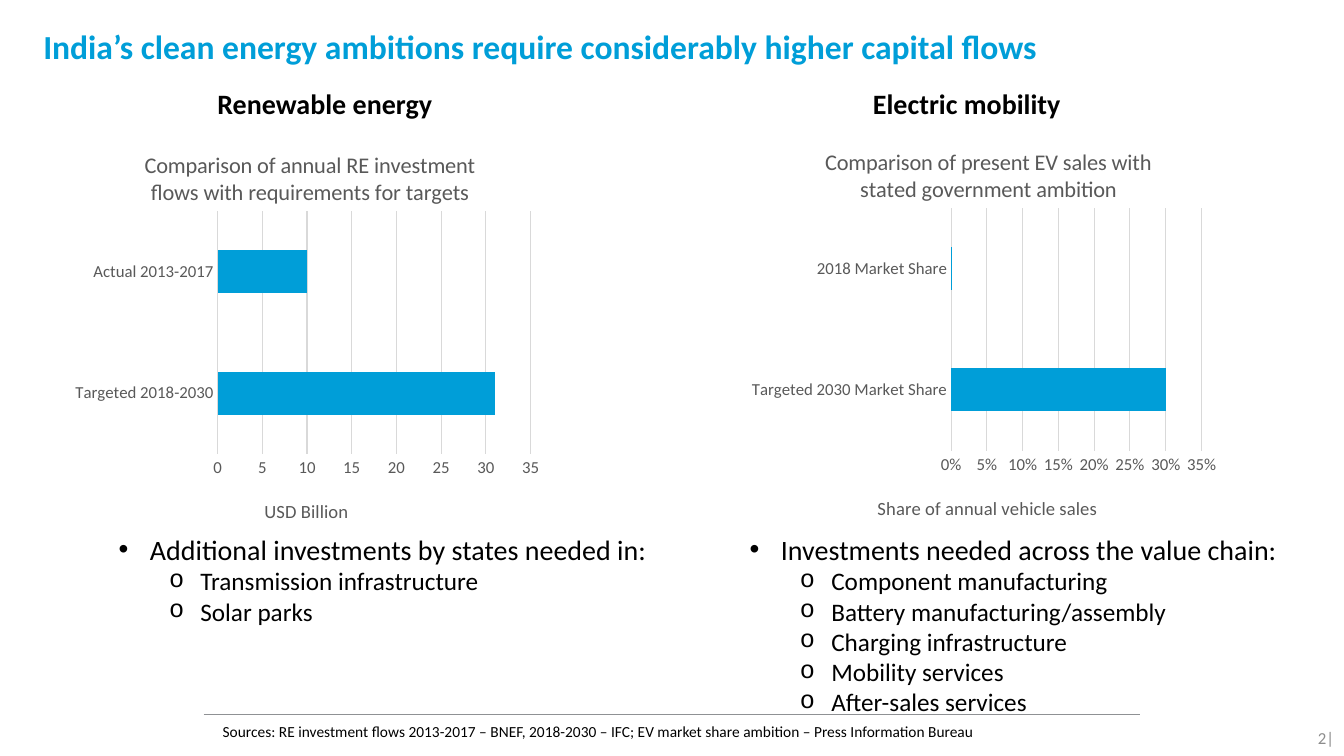
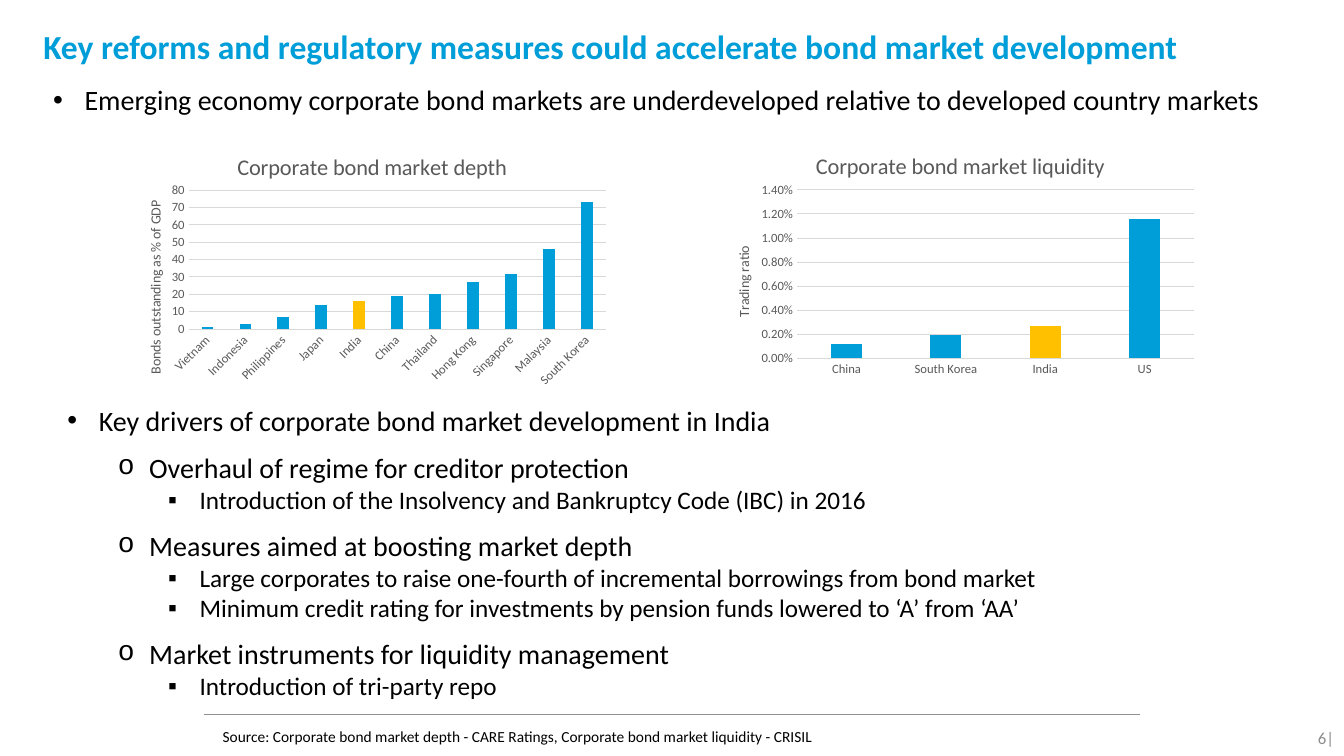
from lxml.etree import SubElement
from pptx import Presentation
from pptx.chart.data import CategoryChartData
from pptx.dml.color import RGBColor
from pptx.enum.chart import XL_CHART_TYPE as ChartType, XL_TICK_MARK as TickMark
from pptx.enum.shapes import MSO_CONNECTOR
from pptx.enum.text import MSO_ANCHOR as Anchor, MSO_AUTO_SIZE as AutoSize, PP_ALIGN as Align
from pptx.oxml.ns import qn
from pptx.util import Cm, Pt

FONT = "Calibri"
BLUE = RGBColor(0x00, 0x9E, 0xD8)
AMBER = RGBColor(0xFF, 0xC0, 0x00)
BLACK = RGBColor(0x00, 0x00, 0x00)
TEXT_GREY = RGBColor(0x59, 0x59, 0x59)
GRID_GREY = RGBColor(0xD9, 0xD9, 0xD9)
RULE_GREY = RGBColor(0x8F, 0x91, 0x94)
NUMBER_GREY = RGBColor(0x8C, 0x8C, 0x8C)

TWO_CONTENT = 3
BULLETS = [("•", "Arial"), ("o", "Courier New"), ("▪", "Arial")]
HANGING, LEVEL_STEP = 0.79, 1.27
TITLE_BOX = (1.09, 0.53, 31.34, 2.21)
NUMBER_BOX = (31.72, 18.08, 2.15, 1.02)

# Style shared by each pair of charts
BARS = dict(kind=ChartType.BAR_CLUSTERED, gap=182, overlap=0, label_size=12, axis_size=13.3)
COLUMNS = dict(kind=ChartType.COLUMN_CLUSTERED, gap=219, overlap=-27, label_size=9, axis_size=10)

# List items are (level, text, size, space before); plot is x, y, width, height in
# fractions of the chart, title_at and axis_at are x, y.
SLIDES = [
    dict(
        title="India’s clean energy ambitions require considerably higher capital flows",
        number="2|",
        source="Sources: RE investment flows 2013-2017 – BNEF, 2018-2030 – IFC; "
               "EV market share ambition – Press Information Bureau",
        source_top=18.08,
        headings=[("Renewable energy", (3.89, 2.06, 8.59, 1.12)),
                  ("Electric mobility", (20.07, 2.06, 8.59, 1.12))],
        lists=[
            ((2.74, 13.28, 14.17, 2.64), [
                (0, "Additional investments by states needed in:", 20, 0),
                (1, "Transmission infrastructure", 18, 0),
                (1, "Solar parks", 18, 0)]),
            ((18.64, 13.28, 14.9, 4.95), [
                (0, "Investments needed across the value chain:", 20, 0),
                (1, "Component manufacturing", 18, 0),
                (1, "Battery manufacturing/assembly", 18, 0),
                (1, "Charging infrastructure", 18, 0),
                (1, "Mobility services", 18, 0),
                (1, "After-sales services", 18, 0)]),
        ],
        charts=[
            dict(BARS, box=(1.6, 3.15, 12.14, 10.36),
                 title="Comparison of annual RE investment flows with requirements for targets",
                 axis="USD Billion", number_format="0", top=35, unit=5,
                 data={"Targeted 2018-2030": 31, "Actual 2013-2017": 10},
                 plot=(0.32, 0.21, 0.65, 0.59), title_at=(0.16, 0.05), axis_at=(0.41, 0.9)),
            dict(BARS, box=(18.75, 3.07, 12.14, 10.36),
                 title="Comparison of present EV sales with stated government ambition",
                 axis="Share of annual vehicle sales", number_format="0%", top=0.35, unit=0.05,
                 data={"Targeted 2030 Market Share": 0.3, "2018 Market Share": 0.001},
                 plot=(0.43, 0.21, 0.52, 0.59), title_at=(0.16, 0.05), axis_at=(0.27, 0.9)),
        ],
    ),
    dict(
        title="Key reforms and regulatory measures could accelerate bond market development",
        number="6|",
        source="Source: Corporate bond market depth - CARE Ratings, "
               "Corporate bond market liquidity - CRISIL",
        source_top=18.21,
        headings=[],
        lists=[
            ((1.09, 1.96, 30.99, 1.12), [
                (0, "Emerging economy corporate bond markets are underdeveloped "
                    "relative to developed country markets", 20, 0)]),
            ((1.45, 10.03, 31.34, 8.0), [
                (0, "Key drivers of corporate bond market development in India", 20, 0),
                (1, "Overhaul of regime for creditor protection", 20, 10),
                (2, "Introduction of the Insolvency and Bankruptcy Code (IBC) in 2016", 18, 0),
                (1, "Measures aimed at boosting market depth", 20, 10),
                (2, "Large corporates to raise one-fourth of incremental borrowings "
                    "from bond market", 18, 0),
                (2, "Minimum credit rating for investments by pension funds lowered "
                    "to ‘A’ from ‘AA’", 18, 0),
                (1, "Market instruments for liquidity management", 20, 10),
                (2, "Introduction of tri-party repo", 18, 0)]),
        ],
        charts=[
            dict(COLUMNS, box=(3, 3.18, 12.52, 6.73), title="Corporate bond market depth",
                 axis="Bonds outstanding as % of GDP", number_format="0", top=80, unit=10,
                 data={"Vietnam": 1, "Indonesia": 3, "Philippines": 7, "Japan": 14, "India": 16,
                       "China": 19, "Thailand": 20, "Hong Kong": 27, "Singapore": 32,
                       "Malaysia": 46, "South Korea": 73},
                 highlight="India", slanted=True,
                 plot=(0.14, 0.24, 0.84, 0.52), title_at=(0.23, 0.08), axis_at=(0.05, 0.27)),
            dict(COLUMNS, box=(17.83, 3.18, 12.52, 6.43), title="Corporate bond market liquidity",
                 axis="Trading ratio", number_format="0.00%", top=0.014, unit=0.002,
                 data={"China": 0.0012, "South Korea": 0.0019, "India": 0.0027, "US": 0.0116},
                 highlight="India",
                 plot=(0.18, 0.25, 0.8, 0.66), title_at=(0.21, 0.08), axis_at=(0.05, 0.46)),
        ],
    ),
]


def cm(values):
    return [Cm(v) for v in values]


def place(shape, box):
    shape.left, shape.top, shape.width, shape.height = cm(box)
    return shape


def style_font(font, size, color, bold=False):
    font.name, font.size, font.bold = FONT, Pt(size), bold
    font.color.rgb = color


def add_bullet(p, level):
    p.level = level
    pPr = p._p.get_or_add_pPr()
    pPr.set("marL", str(Cm(HANGING + LEVEL_STEP * level)))
    pPr.set("indent", str(-Cm(HANGING)))
    char, typeface = BULLETS[level]
    SubElement(pPr, qn("a:buFont")).set("typeface", typeface)
    SubElement(pPr, qn("a:buChar")).set("char", char)


def write(tf, text, size=20, color=BLACK, bold=False, align=Align.LEFT, before=0,
          level=None, anchor=Anchor.TOP, left_inset=0.25, new=False):
    """Write one paragraph; new adds it after those already in the frame."""
    tf.word_wrap, tf.auto_size = True, AutoSize.NONE
    tf.vertical_anchor, tf.margin_left = anchor, Cm(left_inset)
    p = tf.add_paragraph() if new else tf.paragraphs[0]
    p.alignment, p.space_before, p.line_spacing = align, Pt(before), 1.0
    if level is not None:
        add_bullet(p, level)
    r = p.add_run()
    r.text = text
    style_font(r.font, size, color, bold)


def add_text(s, box, text, **fmt):
    write(s.shapes.add_textbox(*cm(box)).text_frame, text, **fmt)


def set_layout(element, **fractions):
    """Fix the place of a chart part in fractions of the chart."""
    layout = element.find(qn("c:layout"))
    if layout is None:
        layout = SubElement(element, qn("c:layout"))
        follower = element.find(qn("c:tx"))
        if follower is not None:
            follower.addnext(layout)
        else:
            element.insert(0, layout)
    for child in list(layout):
        layout.remove(child)
    manual = SubElement(layout, qn("c:manualLayout"))
    settings = dict(xMode="edge", yMode="edge", **fractions)
    if "w" in fractions:
        settings = dict(layoutTarget="inner", **settings)
    for tag, value in settings.items():
        SubElement(manual, qn("c:" + tag)).set("val", str(value))


def title_part(owner, text, size):
    """Give a chart or an axis its title."""
    owner.has_title = True
    tf = (owner.chart_title if hasattr(owner, "chart_title") else owner.axis_title).text_frame
    r = tf.paragraphs[0].add_run()
    r.text = text
    style_font(r.font, size, TEXT_GREY)


def add_chart(s, c):
    data = CategoryChartData(number_format=c["number_format"])
    data.categories = list(c["data"])
    data.add_series("Series 1", list(c["data"].values()))
    chart = s.shapes.add_chart(c["kind"], *cm(c["box"]), data).chart
    style_font(chart.font, 10, BLACK)
    chart.has_legend = False

    plot = chart.plots[0]
    plot.gap_width, plot.overlap, plot.vary_by_categories = c["gap"], c["overlap"], False
    series = plot.series[0]
    series.invert_if_negative = False
    series.format.fill.solid()
    series.format.fill.fore_color.rgb = BLUE
    if "highlight" in c:
        fill = series.points[list(c["data"]).index(c["highlight"])].format.fill
        fill.solid()
        fill.fore_color.rgb = AMBER

    cats, vals = chart.category_axis, chart.value_axis
    for axis in (cats, vals):
        axis.major_tick_mark = axis.minor_tick_mark = TickMark.NONE
        style_font(axis.tick_labels.font, c["label_size"], TEXT_GREY)
    cats.has_major_gridlines, vals.has_major_gridlines = False, True
    for line in (cats.format.line, vals.major_gridlines.format.line):
        line.color.rgb, line.width = GRID_GREY, Pt(0.75)
    vals.format.line.fill.background()
    vals.minimum_scale, vals.maximum_scale, vals.major_unit = 0, c["top"], c["unit"]
    vals.tick_labels.number_format = c["number_format"]
    vals.tick_labels.number_format_is_linked = False

    title_part(chart, c["title"], 16)
    title_part(vals, c["axis"], c["axis_size"])
    area = chart.element.find(qn("c:chart"))
    plot_area = area.find(qn("c:plotArea"))
    set_layout(plot_area, **dict(zip("xywh", c["plot"])))
    set_layout(area.find(qn("c:title")), **dict(zip("xy", c["title_at"])))
    set_layout(plot_area.find(qn("c:valAx")).find(qn("c:title")), **dict(zip("xy", c["axis_at"])))
    if c.get("slanted"):
        labels = plot_area.find(qn("c:catAx")).find(qn("c:txPr"))
        labels.find(qn("a:bodyPr")).set("rot", str(-45 * 60000))


def add_footer(s, number, source, source_top):
    rule = s.shapes.add_connector(MSO_CONNECTOR.STRAIGHT, *cm((5.13, 18.01, 28.73, 18.01)))
    rule.line.color.rgb, rule.line.width = RULE_GREY, Pt(0.75)
    SubElement(rule._element.spPr, qn("a:effectLst"))
    add_text(s, NUMBER_BOX, number, size=12, color=NUMBER_GREY, align=Align.RIGHT,
             anchor=Anchor.MIDDLE)
    add_text(s, (5.61, source_top, 22.78, 0.71), source, size=11, anchor=Anchor.MIDDLE,
             left_inset=0)


def add_slide(prs, content):
    s = prs.slides.add_slide(prs.slide_layouts[TWO_CONTENT])
    write(place(s.shapes.title, TITLE_BOX).text_frame, content["title"], size=24, color=BLUE,
          bold=True, left_inset=0)
    add_footer(s, content["number"], content["source"], content["source_top"])
    for text, box in content["headings"]:
        add_text(s, box, text, bold=True, align=Align.CENTER)
    for chart in content["charts"]:
        add_chart(s, chart)
    for idx, (box, items) in enumerate(content["lists"], start=1):
        tf = place(s.placeholders[idx], box).text_frame
        for i, (level, text, size, before) in enumerate(items):
            write(tf, text, size=size, level=level, before=before, new=i > 0)


def main():
    prs = Presentation()
    prs.slide_width, prs.slide_height = Cm(33.87), Cm(19.05)
    for content in SLIDES:
        add_slide(prs, content)
    prs.save("out.pptx")


if __name__ == "__main__":
    main()
